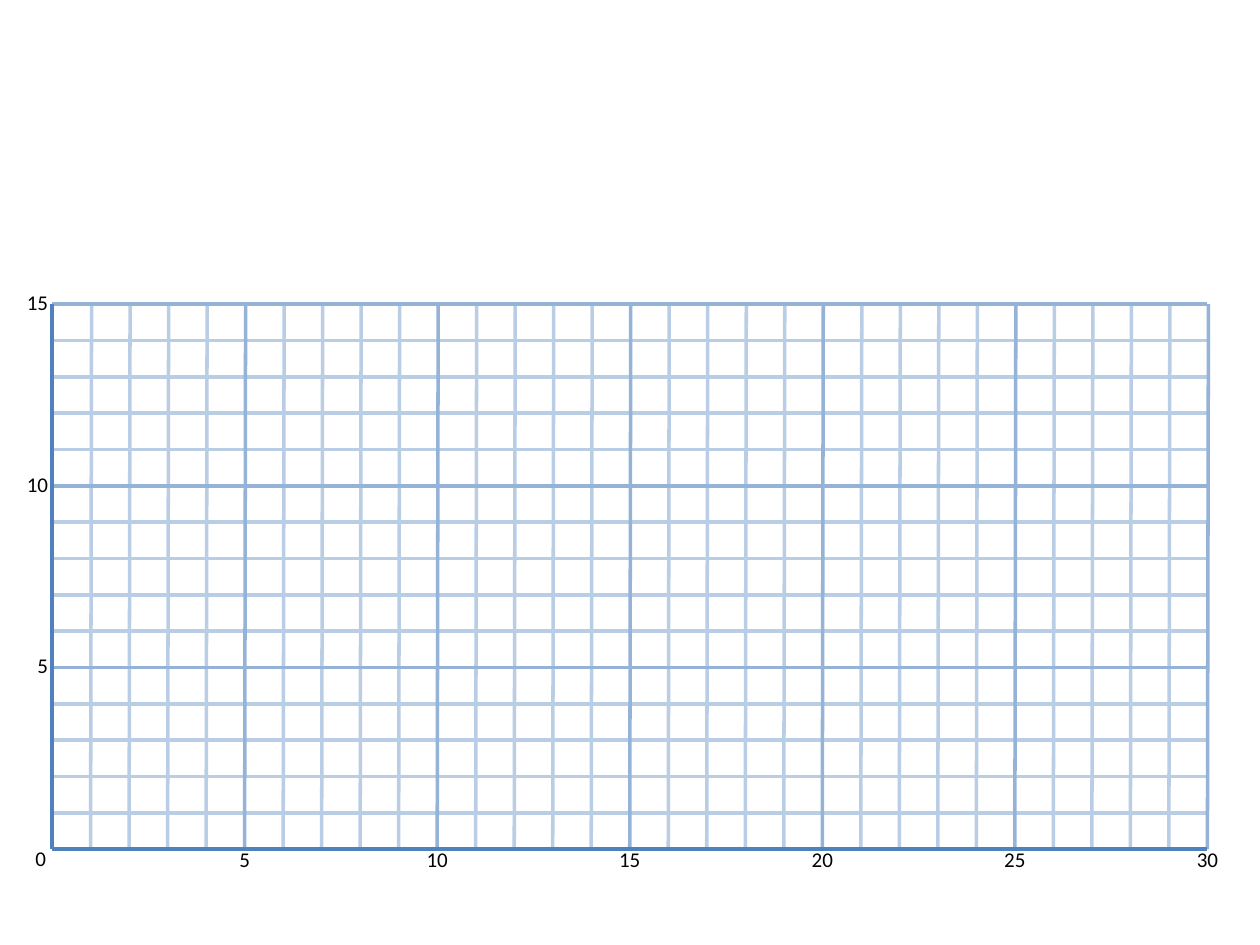
from lxml import etree
from pptx import Presentation
from pptx.dml.color import RGBColor
from pptx.enum.shapes import MSO_CONNECTOR
from pptx.enum.text import MSO_AUTO_SIZE, PP_ALIGN
from pptx.oxml.ns import qn
from pptx.util import Cm, Pt

STRAIGHT = MSO_CONNECTOR.STRAIGHT
FIT = MSO_AUTO_SIZE.SHAPE_TO_FIT_TEXT
CENTER, RIGHT = PP_ALIGN.CENTER, PP_ALIGN.RIGHT

LIGHT, MAJOR, AXIS = "B9CDE5", "95B3D7", "4F81BD"
BLACK = "000000"
LEFT_X, RIGHT_X = 1.05, 24.34
TOP_Y, BOTTOM_Y = 6.13, 17.12
COLUMNS, ROWS, STEP = 30, 15, 5
LEAN = 0.02
LABEL_H = 0.77
LABEL_W = {1: 0.73, 2: 0.94}


def color(hex_string):
    return RGBColor.from_string(hex_string)


def grid_x(value):
    return LEFT_X + value * (RIGHT_X - LEFT_X) / COLUMNS


def grid_y(value):
    return BOTTOM_Y - value * (BOTTOM_Y - TOP_Y) / ROWS


def add_line(s, x1, y1, x2, y2, line_color):
    c = s.shapes.add_connector(STRAIGHT, Cm(x1), Cm(y1), Cm(x2), Cm(y2))
    c.line.color.rgb = color(line_color)
    c.line.width = Pt(2)
    etree.SubElement(c._element.spPr, qn("a:effectLst"))


def add_row_line(s, value, line_color):
    y = grid_y(value)
    add_line(s, LEFT_X, y, RIGHT_X, y, line_color)


def add_column_line(s, value, line_color):
    x = grid_x(value)
    add_line(s, x + LEAN, TOP_Y, x, BOTTOM_Y, line_color)


def add_label(s, value, x, y, align):
    text = str(value)
    width = LABEL_W[len(text)]
    left = x - width if align == RIGHT else x - width / 2
    sp = s.shapes.add_textbox(Cm(left), Cm(y), Cm(width), Cm(LABEL_H))
    tf = sp.text_frame
    for name, setting in {"word_wrap": False, "auto_size": FIT}.items():
        setattr(tf, name, setting)
    p = tf.paragraphs[0]
    p.alignment = align
    r = p.add_run()
    r.text = text
    for name, setting in {"name": "Calibri", "size": Pt(12)}.items():
        setattr(r.font, name, setting)
    r.font.color.rgb = color(BLACK)


def add_grid(s):
    for line_color, is_major in ((LIGHT, False), (MAJOR, True)):
        for value in range(1, ROWS + 1):
            if (value % STEP == 0) == is_major:
                add_row_line(s, value, line_color)
        for value in range(1, COLUMNS + 1):
            if (value % STEP == 0) == is_major:
                add_column_line(s, value, line_color)


def add_axes(s):
    add_row_line(s, 0, AXIS)
    add_line(s, LEFT_X, TOP_Y, LEFT_X, BOTTOM_Y, AXIS)


def add_labels(s):
    add_label(s, 0, 0.82, 16.92, CENTER)
    for value in range(STEP, COLUMNS + 1, STEP):
        add_label(s, value, grid_x(value), 16.95, CENTER)
    for value in range(STEP, ROWS + 1, STEP):
        add_label(s, value, 1.22, grid_y(value) - 0.42, RIGHT)


def main():
    prs = Presentation()
    prs.slide_width, prs.slide_height = Cm(25.4), Cm(19.05)
    s = prs.slides.add_slide(prs.slide_layouts[6])
    add_grid(s)
    add_axes(s)
    add_labels(s)
    prs.save("out.pptx")


if __name__ == "__main__":
    main()
